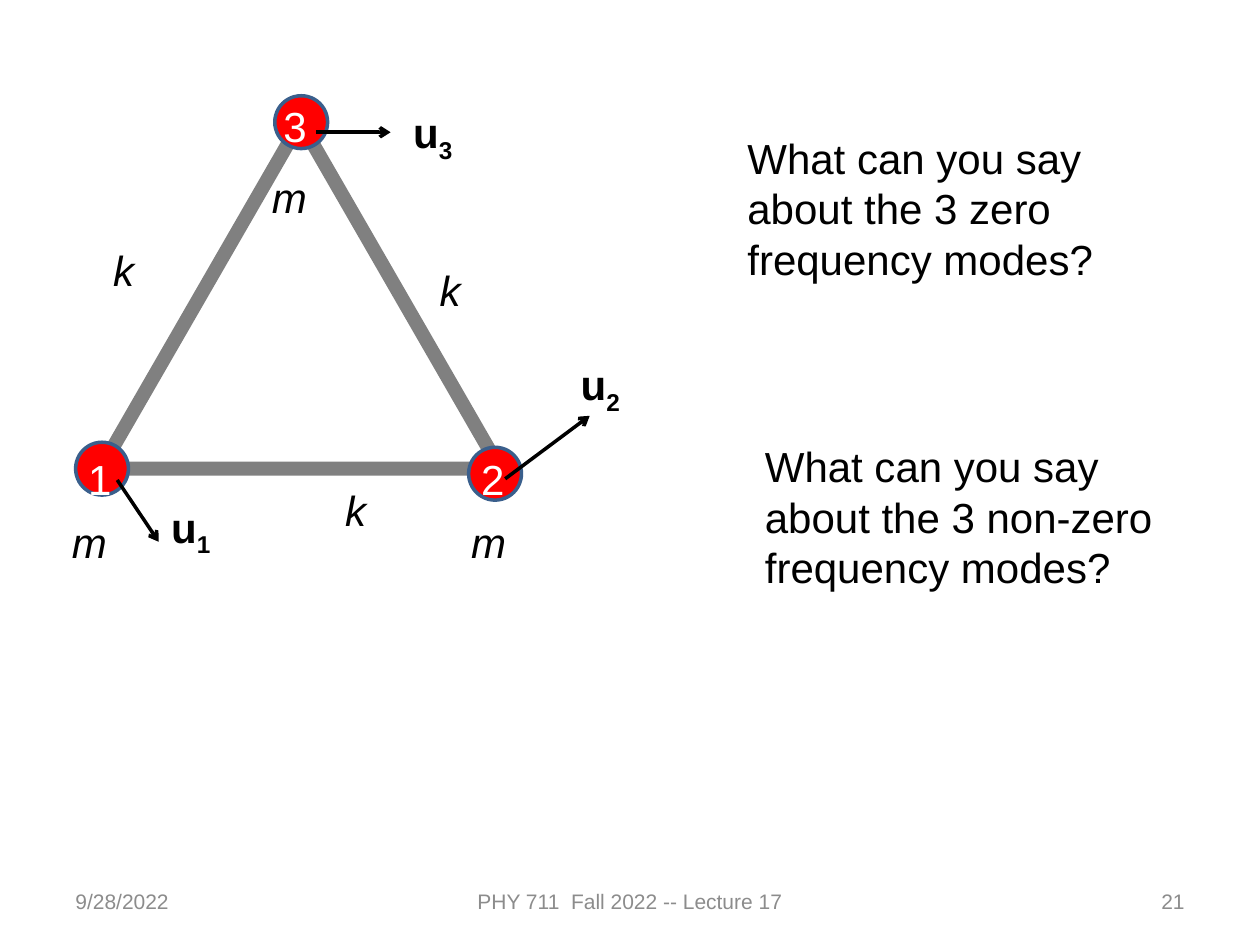
import pptx
import pptx.util
import pptx.dml.color
import pptx.enum.shapes
import pptx.enum.text
import pptx.oxml.ns
from lxml import etree

Pt = pptx.util.Pt
SHAPE = pptx.enum.shapes.MSO_SHAPE
ALIGN = pptx.enum.text.PP_ALIGN
ANCHOR = pptx.enum.text.MSO_ANCHOR
COLORS = {"text": "000000", "footer": "8C8C8C", "number": "FFFFFF",
          "mass": "FF0000", "rim": "3A5F8C", "spring": "808080"}
NUMBER = {"color": "number"}
VECTOR = {"bold": True}
SYMBOL = {"italic": True}
FOOTER = {"size": Pt(12), "color": "footer"}
MASS_SIZE = 30.2
LABEL_HEIGHT = 36

# Offsets from the diagram's corner: mass, number, m label, arrow ends, u label
MASSES = {
    "1": ((9.2, 198.7), (9.2, 201.6), (0, 237.6), (33, 220.3, 56.7, 255.6), (56.7, 229)),
    "2": ((233.8, 201.6), (233.8, 201.6), (228.1, 237.6), (254.7, 219.6, 303, 183.6), (290.7, 147.6)),
    "3": ((123, 0.7), (120.8, 0), (114.3, 40.3), (146.7, 21.6, 189.2, 21.6), (195, 3.6)),
}
SPRING_LABELS = [(23.6, 82.1), (210.1, 93.6), (156.1, 219.6)]


def rgb(name):
    return pptx.dml.color.RGBColor.from_string(COLORS[name])


def add_run(p, text, fmt):
    r = p.add_run()
    r.text = text
    values = {"name": "Arial", "size": Pt(24), "color": "text", **fmt}
    r.font.color.rgb = rgb(values.pop("color"))
    for key, value in values.items():
        setattr(r.font, key, value)
    return r


def add_text(shapes, box, text, fmt, align=ALIGN.LEFT, anchor=ANCHOR.TOP):
    tf = shapes.add_textbox(*map(Pt, box)).text_frame
    tf.word_wrap = True
    tf.vertical_anchor = anchor
    p = tf.paragraphs[0]
    p.alignment = align
    add_run(p, text, fmt)
    return p


def add_outline(shapes, kind, box, line, width, fill=None):
    sp = shapes.add_shape(kind, *map(Pt, box))
    sp.shadow.inherit = False
    if fill:
        sp.fill.solid()
        sp.fill.fore_color.rgb = rgb(fill)
    else:
        sp.fill.background()
    sp.line.color.rgb = rgb(line)
    sp.line.width = Pt(width)


def add_arrow(shapes, ends):
    cxn = shapes.add_connector(pptx.enum.shapes.MSO_CONNECTOR.STRAIGHT, *map(Pt, ends))
    cxn.line.color.rgb = rgb("text")
    cxn.line.width = Pt(2)
    qn = pptx.oxml.ns.qn
    etree.SubElement(cxn.line._get_or_add_ln(), qn("a:tailEnd"), type="arrow")
    etree.SubElement(cxn._element.spPr, qn("a:effectLst"))


def add_molecule(s, left, top):
    """Triangle of springs with a numbered mass and displacement at each corner."""
    shapes = s.shapes.add_group_shape().shapes

    def box(at, width, height=LABEL_HEIGHT):
        return left + at[0], top + at[1], width, height

    add_outline(shapes, SHAPE.ISOSCELES_TRIANGLE, box((23.6, 15.8), 228.2, 198), "spring", 8)
    for number, (mass, digit, symbol, ends, vector) in MASSES.items():
        add_outline(shapes, SHAPE.OVAL, box(mass, MASS_SIZE, MASS_SIZE), "rim", 2, "mass")
        add_text(shapes, box(digit, MASS_SIZE), number, NUMBER)
        x1, y1, x2, y2 = ends
        add_arrow(shapes, (left + x1, top + y1, left + x2, top + y2))
        p = add_text(shapes, box(vector, 54), "u", VECTOR)
        add_run(p, number, VECTOR).font._element.set("baseline", "-25000")
        add_text(shapes, box(symbol, 51), "m", SYMBOL)
    for at in SPRING_LABELS:
        add_text(shapes, box(at, 51), "k", SYMBOL)


def add_questions(s, left, top):
    for dx, dy, kind in [(0, 0, "zero"), (10, 176.4, "non-zero")]:
        add_text(s.shapes, (left + dx, top + dy, 264, 94.3),
                 f"What can you say about the 3 {kind} frequency modes?", {})


def add_footer(s, left, top, width):
    side, middle = 168, 228
    parts = [(left, side, "9/28/2022", ALIGN.LEFT),
             (left + (width - middle) / 2, middle, "PHY 711  Fall 2022 -- Lecture 17", ALIGN.CENTER),
             (left + width - side, side, "21", ALIGN.RIGHT)]
    for x, w, text, align in parts:
        add_text(s.shapes, (x, top, w, 28.8), text, FOOTER, align, ANCHOR.MIDDLE)


def main():
    prs = pptx.Presentation()
    prs.slide_width, prs.slide_height = Pt(720), Pt(540)
    s = prs.slides.add_slide(prs.slide_layouts.get_by_name("Blank"))
    add_footer(s, 36, 500.4, 648)
    add_molecule(s, 34, 54)
    add_questions(s, 420, 72)
    prs.save("out.pptx")


if __name__ == "__main__":
    main()
